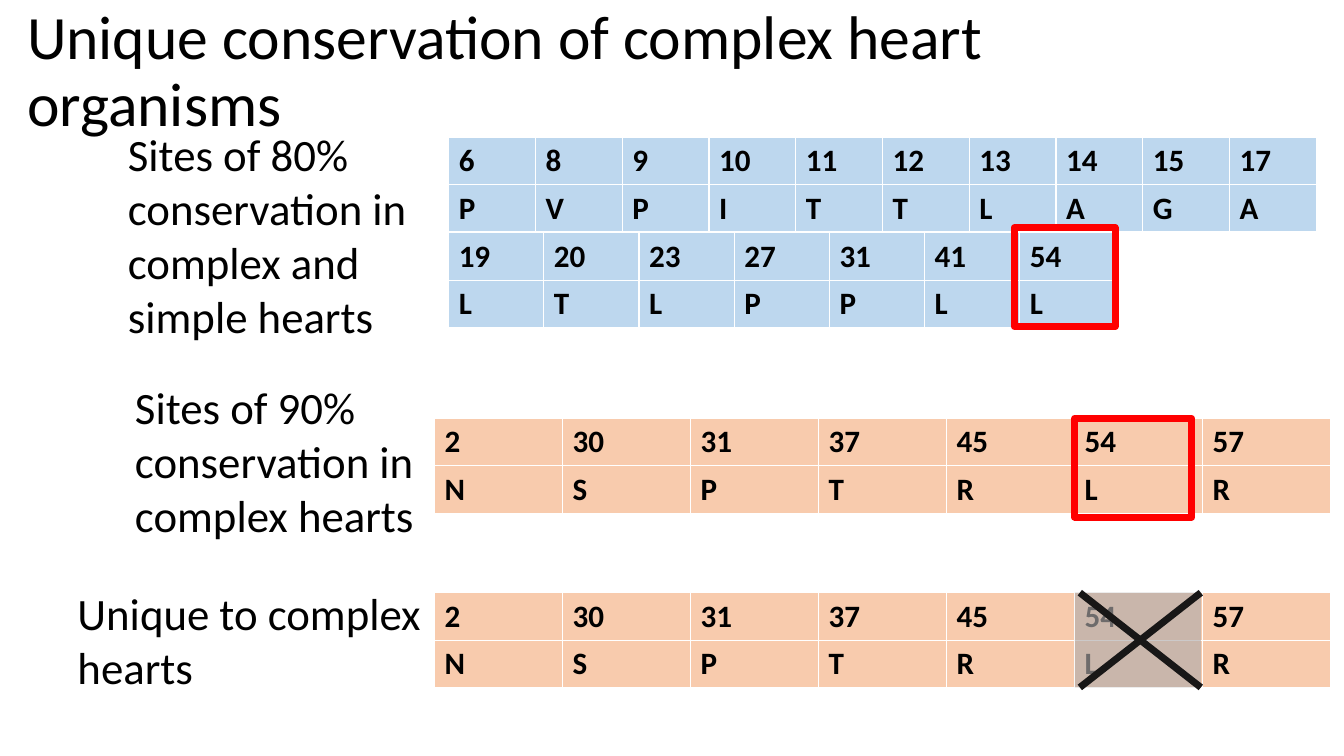
import pptx
import pptx.util
import pptx.dml.color
import pptx.enum.shapes
import pptx.enum.text
import pptx.oxml.ns
import lxml.etree

PX = 9144  # EMU per px, 100 px to the inch

THEME = {
    "font": "Calibri",
    "text": "000000",
    "both_hearts": "BDD7EE",
    "complex_hearts": "F8CBAD",
    "shared_site": "FF0000",
    "excluded": "AFABAB",
    "cross": "181717",
    "title_size": 44,
    "label_size": 32,
    "cell_size": 22.2,
    "line_width": 5,
}


def rgb(name):
    return pptx.dml.color.RGBColor.from_string(THEME[name])


def style_text(frame, size, bold=False):
    for paragraph in frame.paragraphs:
        for run in paragraph.runs:
            run.font.name = THEME["font"]
            run.font.size = pptx.util.Pt(THEME[size])
            run.font.bold = bold
            run.font.color.rgb = rgb("text")


deck = pptx.Presentation()
deck.slide_width, deck.slide_height = 1333 * PX, 750 * PX
slide = deck.slides.add_slide(deck.slide_layouts[6])
shapes = slide.shapes

# Title
title = shapes.add_textbox(17 * PX, 0, 1220 * PX, 145 * PX).text_frame
title.word_wrap = True
title.vertical_anchor = pptx.enum.text.MSO_ANCHOR.MIDDLE
title.text = "Unique conservation of complex heart organisms"
title.paragraphs[0].line_spacing = 0.9
style_text(title, "title_size")

# Conserved sites: left, top, width, fill, positions, residues
complex_sites = ["2", "30", "31", "37", "45", "54", "57"]
site_tables = [
    (445, 136, 861, "both_hearts",
     ["6", "8", "9", "10", "11", "12", "13", "14", "15", "17"], "PVPITTLAGA"),
    (445, 231, 661, "both_hearts",
     ["19", "20", "23", "27", "31", "41", "54"], "LTLPPLL"),
    (431, 415, 889, "complex_hearts", complex_sites, "NSPTRLR"),
    (431, 588, 889, "complex_hearts", complex_sites, "NSPTRLR"),
]
for left, top, width, fill, positions, residues in site_tables:
    sites = shapes.add_table(2, len(positions), left * PX, top * PX,
                             width * PX, 94 * PX).table
    sites.horz_banding = False
    for row, values in enumerate((positions, residues)):
        for column, value in enumerate(values):
            cell = sites.cell(row, column)
            cell.fill.solid()
            cell.fill.fore_color.rgb = rgb(fill)
            cell.text_frame.text = value
            style_text(cell.text_frame, "cell_size", bold=True)

# Row labels
row_labels = [
    (117, 121, 279, "Sites of 80% conservation in complex and simple hearts"),
    (124, 372, 226, "Sites of 90% conservation in complex hearts"),
    (67, 576, 118, "Unique to complex\nhearts"),
]
for left, top, height, wording in row_labels:
    label = shapes.add_textbox(left * PX, top * PX, 365 * PX, height * PX).text_frame
    label.word_wrap = True
    label.text = wording
    style_text(label, "label_size")

# Site 54 veiled in the last table
veil = shapes.add_shape(pptx.enum.shapes.MSO_SHAPE.RECTANGLE,
                        1066 * PX, 588 * PX, 125 * PX, 94 * PX)
veil.shadow.inherit = False
veil.fill.solid()
veil.fill.fore_color.rgb = rgb("excluded")
veil.line.fill.background()
veil_color = veil.fill._xPr.find(".//" + pptx.oxml.ns.qn("a:srgbClr"))
lxml.etree.SubElement(veil_color, pptx.oxml.ns.qn("a:alpha"), val="63000")

# Cross over site 54
for start, end in ((1071, 1191), (1191, 1071)):
    stroke = shapes.add_connector(pptx.enum.shapes.MSO_CONNECTOR.STRAIGHT,
                                  start * PX, 588 * PX, end * PX, 682 * PX)
    stroke.line.color.rgb = rgb("cross")
    stroke.line.width = pptx.util.Pt(THEME["line_width"])
    lxml.etree.SubElement(stroke._element.spPr, pptx.oxml.ns.qn("a:effectLst"))

# Frames around the shared site 54
for left, top, width in ((1006, 226, 100), (1066, 415, 116)):
    frame = shapes.add_shape(pptx.enum.shapes.MSO_SHAPE.RECTANGLE,
                             left * PX, top * PX, width * PX, 98 * PX)
    frame.shadow.inherit = False
    frame.fill.background()
    frame.line.color.rgb = rgb("shared_site")
    frame.line.width = pptx.util.Pt(THEME["line_width"])

deck.save("out.pptx")
